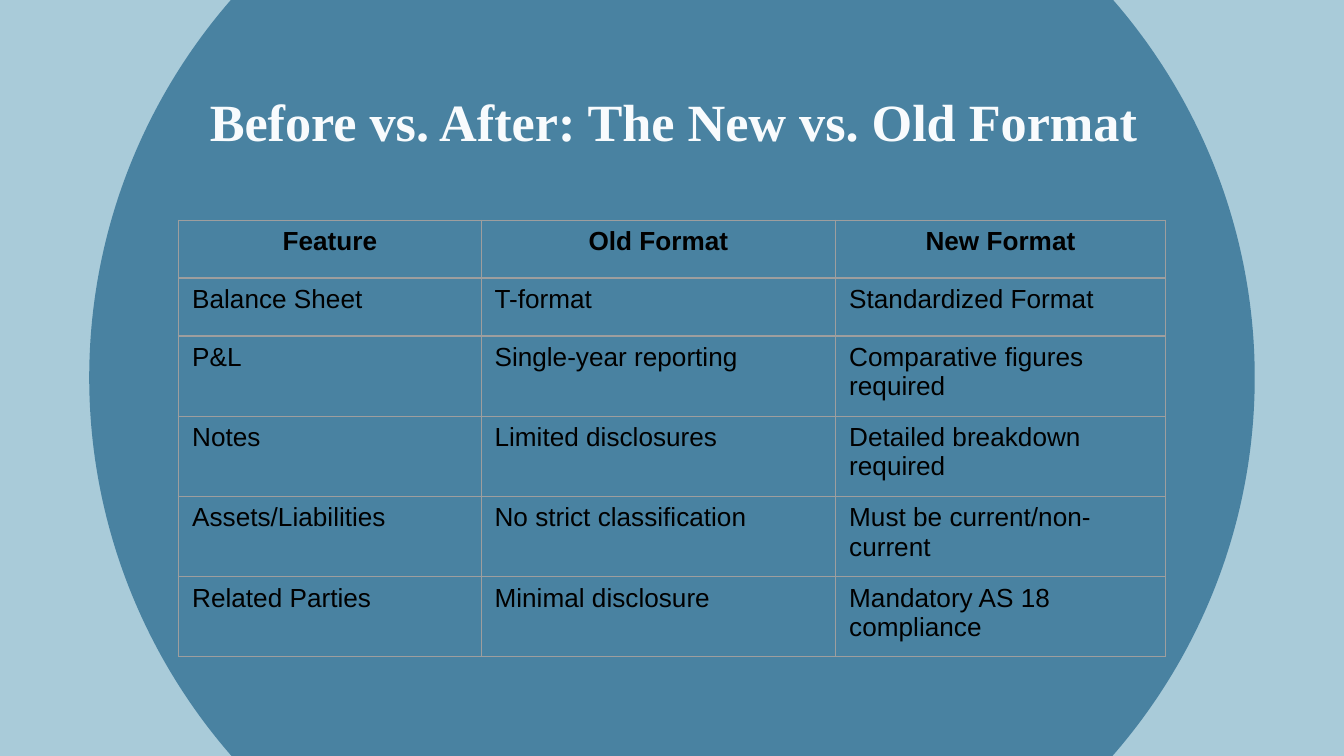
import lxml.etree
import pptx
import pptx.dml.color
import pptx.enum.shapes
import pptx.enum.text
import pptx.oxml.ns
import pptx.util

Pt = pptx.util.Pt
RGBColor = pptx.dml.color.RGBColor
PP_ALIGN = pptx.enum.text.PP_ALIGN
qn = pptx.oxml.ns.qn

THEME = {
    "background": "A9CBD9",
    "circle": "4982A1",
    "title": "F8FBFD",
    "text": "000000",
    "border": "9E9E9E",
    "title_font": "Times New Roman",
    "body_font": "Arial",
    "title_size": 28,
    "body_size": 14,
    "border_width": 0.75,
}

COLUMN_WIDTHS = [162, 190, 176.5]
ROW_HEIGHTS = [31, 31, 43, 43, 43, 43]
ROWS = [
    ["Feature", "Old Format", "New Format"],
    ["Balance Sheet", "T-format", "Standardized Format"],
    ["P&L", "Single-year reporting", "Comparative figures required"],
    ["Notes", "Limited disclosures", "Detailed breakdown required"],
    ["Assets/Liabilities", "No strict classification", "Must be current/non-current"],
    ["Related Parties", "Minimal disclosure", "Mandatory AS 18 compliance"],
]


def format_paragraph(paragraph, role, bold, alignment):
    paragraph.alignment = alignment
    for run in paragraph.runs:
        run.font.name = THEME[f"{role}_font"]
        run.font.size = Pt(THEME[f"{role}_size"])
        run.font.bold = bold
        run.font.color.rgb = RGBColor.from_string(THEME["title" if role == "title" else "text"])


def add_borders(cell):
    """Draw a thin line on all four sides; call before the cell is filled."""
    properties = cell._tc.get_or_add_tcPr()
    for side in ("lnL", "lnR", "lnT", "lnB"):
        line = lxml.etree.SubElement(properties, qn(f"a:{side}"), w=str(Pt(THEME["border_width"])))
        fill = lxml.etree.SubElement(line, qn("a:solidFill"))
        lxml.etree.SubElement(fill, qn("a:srgbClr"), val=THEME["border"])


presentation = pptx.Presentation()
presentation.slide_width = Pt(720)
presentation.slide_height = Pt(405)
slide = presentation.slides.add_slide(presentation.slide_layouts[5])
slide.background.fill.solid()
slide.background.fill.fore_color.rgb = RGBColor.from_string(THEME["background"])

# Title
title = slide.shapes.title
title.left, title.top, title.width, title.height = Pt(37.5), Pt(38), Pt(646.5), Pt(45.5)
title_frame = title.text_frame
title_frame.text = "Before vs. After: The New vs. Old Format"
title_frame.vertical_anchor = pptx.enum.text.MSO_ANCHOR.TOP
title_frame.auto_size = pptx.enum.text.MSO_AUTO_SIZE.NONE
title_frame.margin_top = Pt(10)
format_paragraph(title_frame.paragraphs[0], "title", True, PP_ALIGN.CENTER)

# Large circle behind the title and the table
circle = slide.shapes.add_shape(
    pptx.enum.shapes.MSO_SHAPE.OVAL, Pt(47.8), Pt(-107.3), Pt(624.4), Pt(619.2)
)
circle.shadow.inherit = False
circle.fill.solid()
circle.fill.fore_color.rgb = RGBColor.from_string(THEME["circle"])
circle.line.fill.background()
title.element.addprevious(circle.element)

# Comparison table
table = slide.shapes.add_table(
    len(ROWS), len(COLUMN_WIDTHS), Pt(95.75), Pt(118),
    Pt(sum(COLUMN_WIDTHS)), Pt(sum(ROW_HEIGHTS)),
).table
table.first_row = False
table.horz_banding = False
for column, width in zip(table.columns, COLUMN_WIDTHS):
    column.width = Pt(width)
for row_index, (row, height, texts) in enumerate(zip(table.rows, ROW_HEIGHTS, ROWS)):
    row.height = Pt(height)
    is_header = row_index == 0
    alignment = PP_ALIGN.CENTER if is_header else PP_ALIGN.LEFT
    for cell, text in zip(row.cells, texts):
        cell.text_frame.text = text
        format_paragraph(cell.text_frame.paragraphs[0], "body", is_header, alignment)
        add_borders(cell)
        cell.fill.background()

presentation.save("out.pptx")
